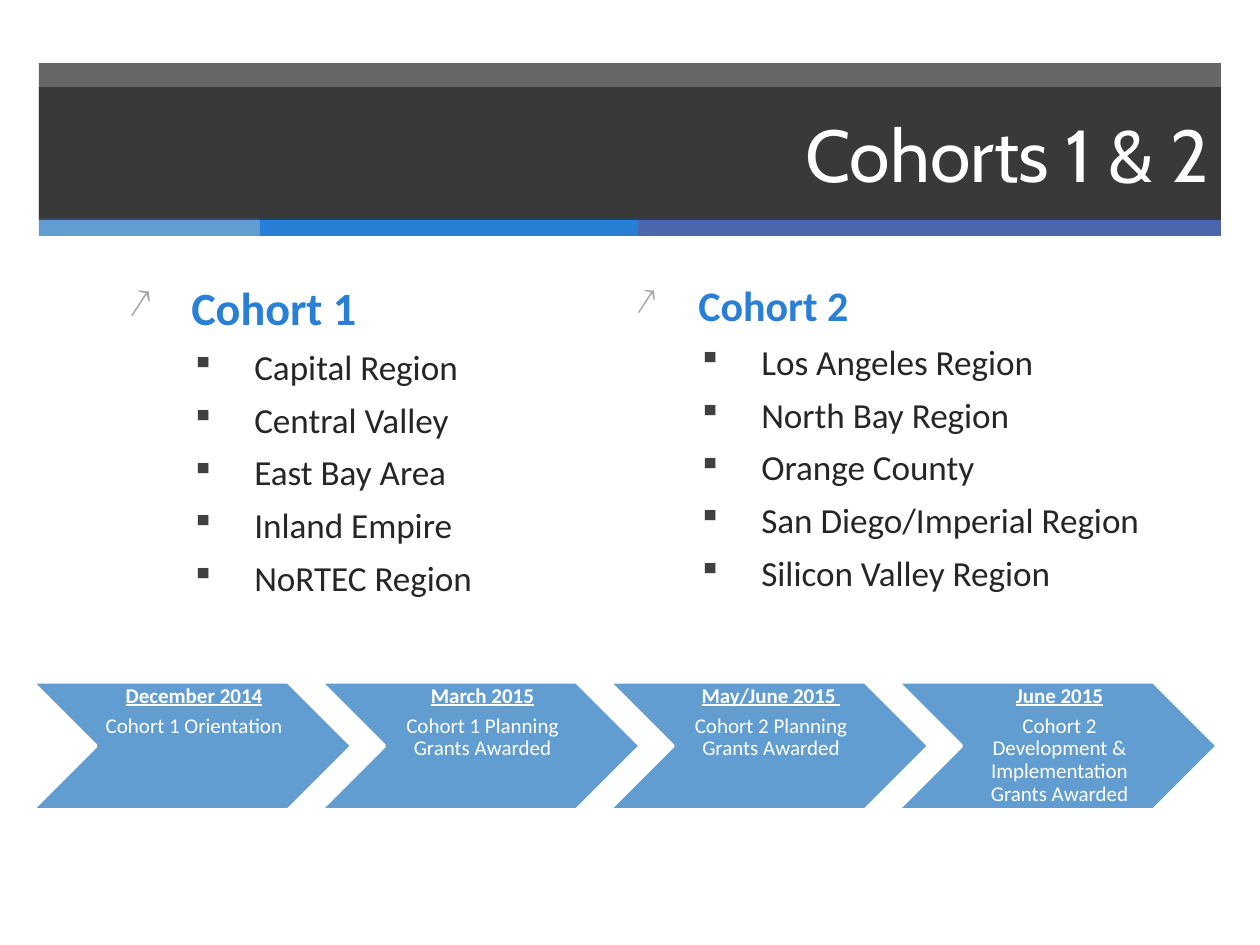
from lxml.etree import SubElement
from pptx import Presentation
from pptx.dml.color import RGBColor
from pptx.enum.shapes import MSO_SHAPE as SHAPE
from pptx.enum.text import MSO_ANCHOR as ANCHOR, PP_ALIGN as ALIGN
from pptx.oxml.ns import qn
from pptx.util import Pt

# Content
TITLE = "Cohorts 1 & 2"
COHORTS = [
    ("Cohort 1", 26.4, ["Capital Region", "Central Valley", "East Bay Area",
                        "Inland Empire", "NoRTEC Region"]),
    ("Cohort 2", 24, ["Los Angeles Region", "North Bay Region", "Orange County",
                      "San Diego/Imperial Region", "Silicon Valley Region"]),
]
STEPS = [
    ("December 2014", "Cohort 1 Orientation"),
    ("March 2015", "Cohort 1 Planning Grants Awarded"),
    ("May/June 2015 ", "Cohort 2 Planning Grants Awarded"),
    ("June 2015", "Cohort 2 Development & Implementation Grants Awarded"),
]

# Colours and fonts
WHITE = RGBColor(0xFF, 0xFF, 0xFF)
DARK = RGBColor(0x26, 0x26, 0x26)
SKY = RGBColor(0x62, 0x9D, 0xD1)
BLUE = RGBColor(0x29, 0x7F, 0xD5)
INDIGO = RGBColor(0x4A, 0x66, 0xAC)
ARROW_GREY = RGBColor(0xA6, 0xA6, 0xA6)
BULLET_GREY = RGBColor(0x40, 0x40, 0x40)
HEAD_FONT, BODY_FONT = "Cabin", "Calibri"

# Layout in px, 126 to the inch
LEFT, BAND_W = 39, 1182
STRIPES = [(221, SKY), (378, BLUE), (583, INDIGO)]
LIST_X, LIST_Y, LIST_W, LIST_H, LIST_PITCH = 116, 273, 532, 336, 507
INDENT = 63
STEP_X, STEP_Y, STEP_W, STEP_H, STEP_PITCH = 32, 682, 320, 128, 288.5
LABEL_DX, LABEL_W = 64, 193


def px(n):
    return round(n * 914400 / 126)


def add_shape(slide, kind, x, y, w, h, fill, alpha=None, line=None):
    sp = slide.shapes.add_shape(kind, px(x), px(y), px(w), px(h))
    sp.shadow.inherit = False
    sp.fill.solid()
    sp.fill.fore_color.rgb = fill
    if alpha:
        clr = sp.fill._xPr.find(qn("a:solidFill"))[0]
        SubElement(clr, qn("a:alpha"), val=str(alpha * 1000))
    if line:
        sp.line.color.rgb = line
        sp.line.width = Pt(2)
    else:
        sp.line.fill.background()
    return sp


def add_box(slide, x, y, w, h):
    tf = slide.shapes.add_textbox(px(x), px(y), px(w), px(h)).text_frame
    tf.word_wrap = True
    return tf


def add_text(tf, text, size, color, font=BODY_FONT, bold=False, underline=False,
             align=ALIGN.LEFT, before=0, after=0, spacing=1.0):
    p = tf.paragraphs[0]
    if p.runs:
        p = tf.add_paragraph()
    p.alignment, p.line_spacing = align, spacing
    p.space_before, p.space_after = Pt(before), Pt(after)
    r = p.add_run()
    r.text = text
    r.font.name, r.font.size = font, Pt(size)
    r.font.bold, r.font.underline = bold, underline
    r.font.color.rgb = color
    return p


def add_bullet(p, char, color, level):
    p.level = level
    pPr = p._p.get_or_add_pPr()
    pPr.set("marL", str(px(INDENT * (level + 1))))
    pPr.set("indent", str(px(-INDENT)))
    clr = SubElement(pPr, qn("a:buClr"))
    SubElement(clr, qn("a:srgbClr"), val=str(color))
    SubElement(pPr, qn("a:buSzPct"), val="90000")
    SubElement(pPr, qn("a:buChar"), char=char)


prs = Presentation()
prs.slide_width, prs.slide_height = px(1260), px(945)
slide = prs.slides.add_slide(prs.slide_layouts[6])

# Header band, stripes and title
add_shape(slide, SHAPE.RECTANGLE, LEFT, 63, BAND_W, 156, DARK, alpha=70)
x = LEFT
for w, color in STRIPES:
    add_shape(slide, SHAPE.RECTANGLE, x, 218, w, 18, color)
    x += w
band = add_shape(slide, SHAPE.RECTANGLE, LEFT, 87, BAND_W, 133, DARK, alpha=70)
band.text_frame.vertical_anchor = ANCHOR.MIDDLE
add_text(band.text_frame, TITLE, 42, WHITE, font=HEAD_FONT, align=ALIGN.RIGHT)

# Cohort lists
for i, (head, size, regions) in enumerate(COHORTS):
    tf = add_box(slide, LIST_X + i * LIST_PITCH, LIST_Y, LIST_W, LIST_H)
    add_bullet(add_text(tf, head, size, BLUE, bold=True), "↗", ARROW_GREY, 0)
    for region in regions:
        p = add_text(tf, region, 20.1, DARK, before=6)
        add_bullet(p, "▪", BULLET_GREY, 1)

# Timeline chevrons
for i, (date, event) in enumerate(STEPS):
    x = STEP_X + i * STEP_PITCH
    add_shape(slide, SHAPE.CHEVRON, x, STEP_Y, STEP_W, STEP_H, SKY, line=WHITE)
    tf = add_box(slide, x + LABEL_DX, STEP_Y, LABEL_W, STEP_H)
    tf.margin_left = px(6)
    tf.margin_top = tf.margin_right = tf.margin_bottom = px(3)
    for text, strong in ((date, True), (event, False)):
        add_text(tf, text, 12, WHITE, bold=strong, underline=strong,
                 align=ALIGN.CENTER, after=4.2, spacing=0.9)

prs.save("out.pptx")
